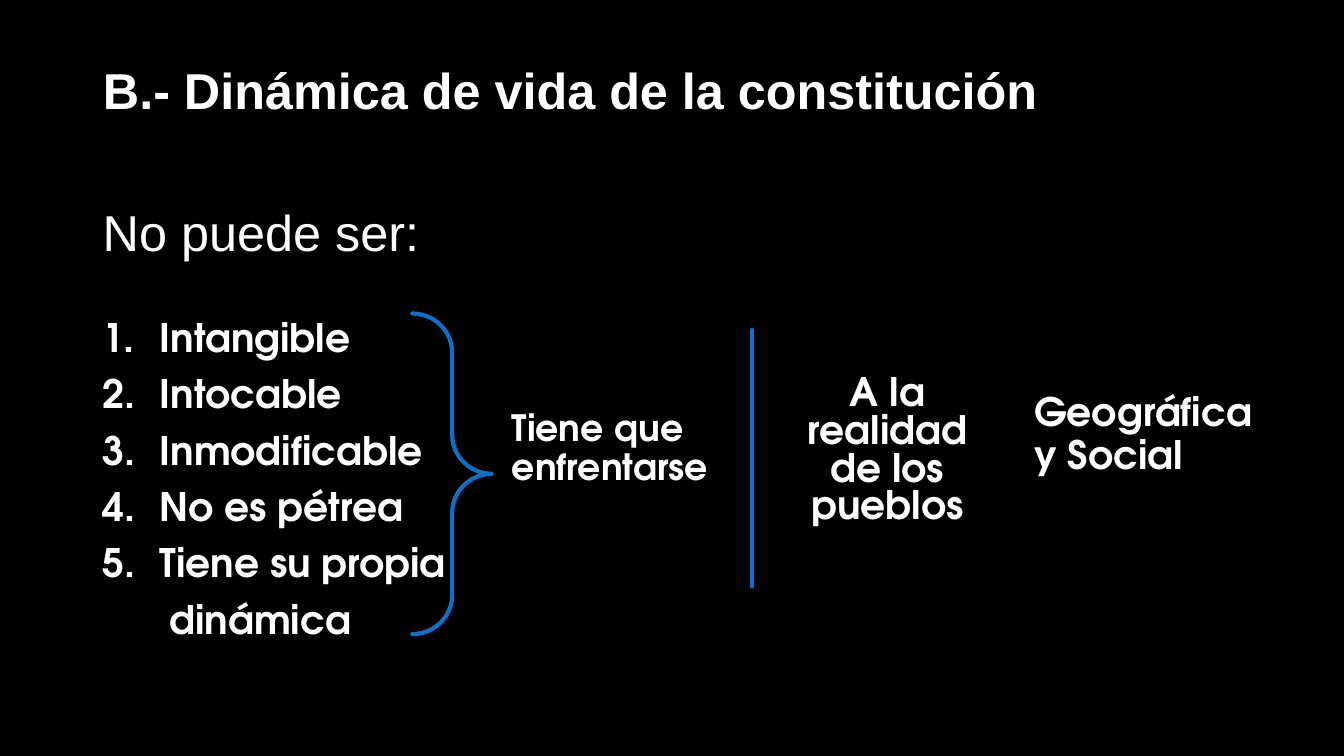
from lxml.etree import SubElement
from pptx import Presentation
from pptx.dml.color import RGBColor
from pptx.enum.shapes import MSO_CONNECTOR as LINE, MSO_SHAPE as SHAPE
from pptx.enum.text import MSO_ANCHOR as ANCHOR, MSO_AUTO_SIZE as SIZE, PP_ALIGN as ALIGN
from pptx.oxml.ns import qn
from pptx.util import Cm, Pt

# Content
TITLE = "B.- Dinámica de vida de la constitución"
LEAD = "No puede ser:"
TRAITS = ["Intangible", "Intocable", "Inmodificable", "No es pétrea", "Tiene su propia"]
CONTINUATION = "dinámica"
# text, box in cm, size, line spacing, alignment
NOTES = [
    ("Tiene que enfrentarse", (12.65, 10.21, 5.84, 2.67), 25.9, 0.9, ALIGN.LEFT),
    ("A la realidad de los pueblos", (19.38, 9.37, 5.97, 4.34), 28, 0.8, ALIGN.CENTER),
    ("Geográfica y Social", (25.81, 9.78, 6.4, 2.67), 28, 0.9, ALIGN.LEFT),
]

# Style
COLORS = {"background": "000000", "text": "FFFFFF", "line": "0F6FC6"}
HEAD_FONT, BODY_FONT = "Arial", "TeX Gyre Adventor"
LEFT, HEAD_WIDTH, HEAD_HEIGHT = 2.34, 29.21, 2
HEAD_CENTERS = (2.25, 5.83)
INDENT, CONTINUATION_INDENT = 1.43, 1.68


def color(name):
    return RGBColor.from_string(COLORS[name])


def place(sp, box):
    sp.left, sp.top, sp.width, sp.height = map(Cm, box)


def format_text(sp, font, size, bold=True, align=ALIGN.LEFT, spacing=1.0, before=0):
    tf = sp.text_frame
    tf.word_wrap, tf.auto_size = True, SIZE.NONE
    for p in tf.paragraphs:
        p.alignment, p.line_spacing, p.space_before = align, spacing, Pt(before)
        for r in p.runs:
            r.font.name, r.font.size, r.font.bold = font, Pt(size), bold
            r.font.color.rgb = color("text")


def indent(p, margin, first, numbered):
    pPr = p._p.get_or_add_pPr()
    pPr.set("marL", str(Cm(margin)))
    pPr.set("indent", str(Cm(first)))
    if numbered:
        SubElement(pPr, qn("a:buFont"), typeface="+mj-lt")
        SubElement(pPr, qn("a:buAutoNum"), type="arabicPeriod")
    else:
        SubElement(pPr, qn("a:buNone"))


def format_line(sp):
    sp.line.color.rgb, sp.line.width = color("line"), Pt(3)
    sp.line._get_or_add_ln().set("cap", "rnd")


prs = Presentation()
prs.slide_width, prs.slide_height = Cm(33.87), Cm(19.05)
s = prs.slides.add_slide(prs.slide_layouts[1])
s.background.fill.solid()
s.background.fill.fore_color.rgb = color("background")

# Headings
title, body = s.placeholders
lead = s.shapes.add_textbox(0, 0, 0, 0)
for sp, text, center, bold in zip((title, lead), (TITLE, LEAD), HEAD_CENTERS, (True, False)):
    place(sp, (LEFT, center - HEAD_HEIGHT / 2, HEAD_WIDTH, HEAD_HEIGHT))
    sp.text_frame.text = text
    sp.text_frame.vertical_anchor = ANCHOR.MIDDLE
    format_text(sp, HEAD_FONT, 36, bold)

# Numbered list
place(body, (LEFT, 7.9, 13.31, 9.27))
body.text_frame.text = "\n".join(TRAITS + [CONTINUATION])
format_text(body, BODY_FONT, 28, spacing=0.9, before=10)
*numbered, last = body.text_frame.paragraphs
for p in numbered:
    indent(p, INDENT, -INDENT, True)
indent(last, CONTINUATION_INDENT, 0, False)

# Notes to the right of the list
for text, box, size, spacing, align in NOTES:
    sp = s.shapes.add_textbox(*map(Cm, box))
    sp.text_frame.text = text
    format_text(sp, BODY_FONT, size, align=align, spacing=spacing, before=10)

# Brace and divider
brace = s.shapes.add_shape(SHAPE.RIGHT_BRACE, Cm(10.39), Cm(7.9), Cm(2.01), Cm(8.08))
brace.adjustments[0], brace.adjustments[1] = 0.49, 0.5
brace.shadow.inherit = False
brace.fill.background()
format_line(brace)

divider = s.shapes.add_connector(LINE.STRAIGHT, Cm(18.95), Cm(8.31), Cm(18.95), Cm(14.78))
format_line(divider)
SubElement(divider._element.spPr, qn("a:effectLst"))

prs.save("out.pptx")
